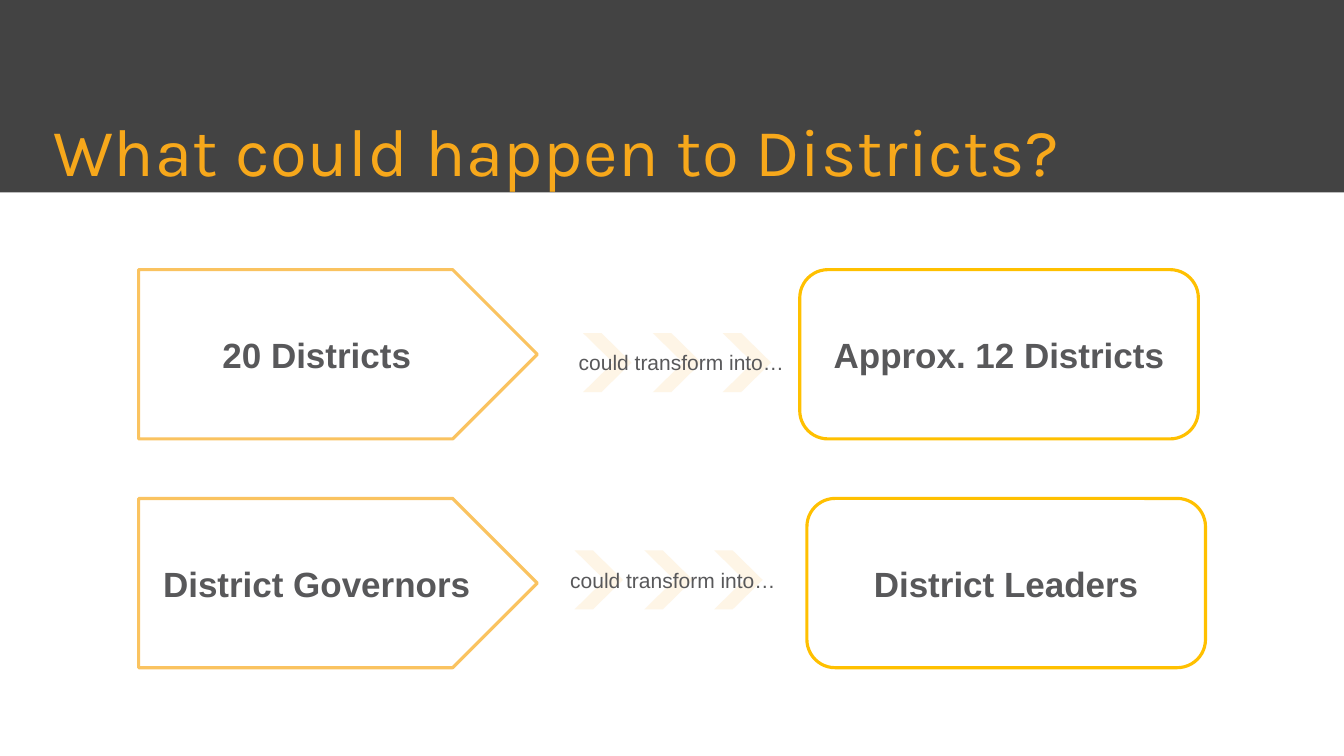
from pptx import Presentation
from pptx.dml.color import RGBColor
from pptx.enum import shapes, text
from pptx.util import Cm, Pt

HUE = {"band": "434343", "title": "F7A81B", "ink": "58585A", "white": "FFFFFF",
       "from": "FAC360", "to": "FFC000", "arrow": "FEF5E6"}
TITLE = "What could happen to Districts?"
LINK = "could transform into…"
# before, after, row top, left of after box, first chevron (left, top); in cm
ROWS = [
    ("20 Districts", "Approx. 12 Districts", 13.59, 40.31, (29.39, 16.79)),
    ("District Governors", "District Leaders", 25.12, 40.67, (28.96, 27.74)),
]
LEFT, WIDE, HIGH = 6.99, 20.09, 8.53
STEP = 3.52
KIND = shapes.MSO_SHAPE


def color(name):
    return RGBColor.from_string(HUE[name])


def write(shape, words, size, font="Arial", hue="ink", bold=False,
          align=text.PP_ALIGN.CENTER, pad=(0.15, 0.15), grow=False):
    """Fill a shape with one paragraph; pad is (sides, top and bottom) in cm."""
    frame = shape.text_frame
    frame.word_wrap = True
    frame.auto_size = (text.MSO_AUTO_SIZE.SHAPE_TO_FIT_TEXT if grow
                       else text.MSO_AUTO_SIZE.NONE)
    frame.vertical_anchor = text.MSO_ANCHOR.MIDDLE
    frame.margin_left = frame.margin_right = Cm(pad[0])
    frame.margin_top = frame.margin_bottom = Cm(pad[1])
    para = frame.paragraphs[0]
    para.alignment = align
    run = para.add_run()
    run.text = words
    run.font.size, run.font.name, run.font.bold = Pt(size), font, bold
    run.font.color.rgb = color(hue)
    return para


def draw(home, kind, box, fill=None, line=None):
    shape = home.add_shape(kind, *map(Cm, box))
    shape.shadow.inherit = False
    if fill:
        shape.fill.solid()
        shape.fill.fore_color.rgb = color(fill)
    else:
        shape.fill.background()
    if line:
        shape.line.color.rgb = color(line)
        shape.line.width = Pt(4.5)
    else:
        shape.line.fill.background()
    return shape


def head(slide):
    title = slide.shapes.title
    band = draw(slide.shapes, KIND.RECTANGLE, (0, 0, 67.74, 9.7), "band")
    title._element.addprevious(band._element)
    title.left, title.top, title.width, title.height = map(
        Cm, (0, 6.35, 61.95, 3.35))
    para = write(title, TITLE, 96, "Karla", "title",
                 align=text.PP_ALIGN.LEFT, grow=True)
    para.line_spacing = 0.7
    props = para._p.get_or_add_pPr()
    props.set("marL", str(Cm(2.54)))
    props.set("indent", "0")
    para.runs[0]._r.get_or_add_rPr().set("spc", "90")


def link(slide, left, top):
    group = slide.shapes.add_group_shape()
    for i in range(3):
        mark = draw(group.shapes, KIND.CHEVRON,
                    (left + i * STEP, top, 2.44, 2.97), "arrow")
        mark.adjustments[0] = 0.62
    label = slide.shapes.add_textbox(
        *map(Cm, (left - 1.98, top + 0.69, 13.87, 1.57)))
    write(label, LINK, 30, grow=True)


def main():
    deck = Presentation()
    deck.slide_width, deck.slide_height = Cm(67.74), Cm(38.1)
    slide = deck.slides.add_slide(deck.slide_layouts[5])
    head(slide)
    for old, new, top, right, mark in ROWS:
        start = draw(slide.shapes, KIND.PENTAGON, (LEFT, top, WIDE, HIGH),
                     "white", "from")
        write(start, old, 50, bold=True, pad=(0.5, 2))
        end = draw(slide.shapes, KIND.ROUNDED_RECTANGLE,
                   (right, top, WIDE, HIGH), line="to")
        write(end, new, 50, bold=True, pad=(0.25, 1))
        link(slide, *mark)
    deck.save("out.pptx")


if __name__ == "__main__":
    main()
